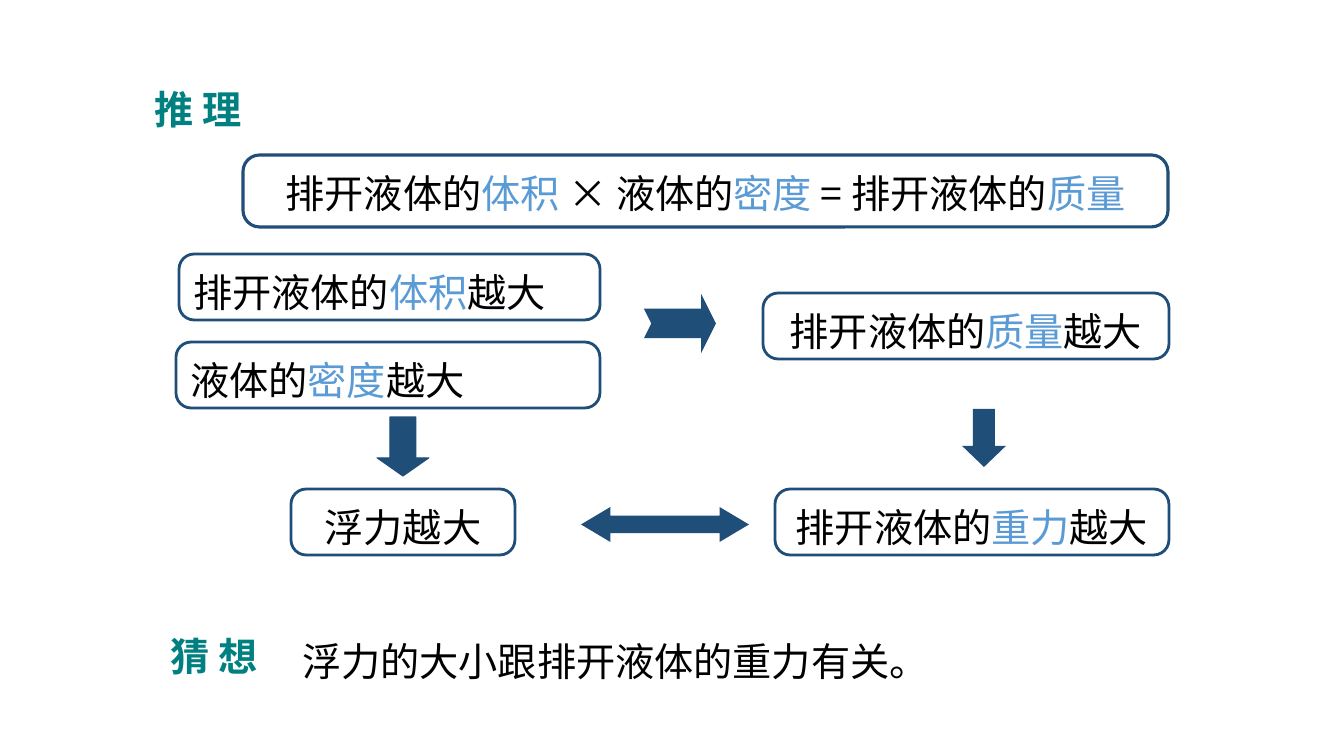
from lxml.etree import SubElement
from pptx import Presentation
from pptx.dml.color import RGBColor
from pptx.enum.shapes import MSO_SHAPE as Shape
from pptx.enum.text import MSO_ANCHOR as Anchor, MSO_AUTO_SIZE as Auto, PP_ALIGN as Align
from pptx.oxml.ns import qn
from pptx.util import Emu, Pt

NAVY = RGBColor(0x1F, 0x4E, 0x79)
SKY = RGBColor(0x5B, 0x9B, 0xD5)
TEAL = RGBColor(0x00, 0x80, 0x80)
BLACK = RGBColor(0, 0, 0)


class Board:
    scale = 914400 / 100.8
    font = "Noto Sans CJK SC"
    size = Pt(28)

    def __init__(self, deck):
        deck.slide_width, deck.slide_height = self.emu(1344, 756)
        self.slide = deck.slides.add_slide(deck.slide_layouts[5])

    def emu(self, *px):
        return [Emu(round(n * self.scale)) for n in px]

    def shape(self, kind, area):
        item = self.slide.shapes.add_shape(kind, *self.emu(*area))
        item.shadow.inherit = False
        item.fill.background()
        item.line.fill.background()
        return item

    def style(self, run, color, bold=False):
        font = run.font
        font.name, font.size, font.bold = self.font, self.size, bold
        font.color.rgb = color
        SubElement(run._r.get_or_add_rPr(), qn("a:ea"), typeface=self.font)

    def frame(self, item, wrap, align=Align.LEFT):
        frame = item.text_frame
        frame.word_wrap = wrap
        frame.auto_size = Auto.NONE
        frame.vertical_anchor = Anchor.TOP
        frame.paragraphs[0].alignment = align
        return frame

    def head(self, item, text):
        frame = self.frame(item, False)
        frame.text = text
        self.style(frame.paragraphs[0].runs[0], TEAL, True)

    def title(self, text, area):
        item = self.slide.shapes.title
        item.left, item.top, item.width, item.height = self.emu(*area)
        self.head(item, text)

    def label(self, text, area):
        self.head(self.shape(Shape.ROUNDED_RECTANGLE, area), text)

    def box(self, text, area, align=Align.CENTER, line=2):
        """Rounded box; the parts of text between asterisks are stressed."""
        item = self.shape(Shape.ROUNDED_RECTANGLE, area)
        item.adjustments[0] = 0.23
        if line:
            item.line.color.rgb = NAVY
            item.line.width = Pt(line)
        frame = self.frame(item, True, align)
        frame.margin_top = 0
        para = frame.paragraphs[0]
        para.line_spacing = 1.2
        for i, part in enumerate(text.split("*")):
            if part:
                run = para.add_run()
                run.text = part
                self.style(run, SKY if i % 2 else BLACK)

    def arrow(self, kind, area, head, line=None):
        item = self.shape(kind, area)
        item.adjustments[0], item.adjustments[1] = 0.5, head
        item.fill.solid()
        item.fill.fore_color.rgb = NAVY
        if line:
            item.line.color.rgb = NAVY
            item.line.width = Pt(line)


def main():
    deck = Presentation()
    board = Board(deck)
    board.title("推 理", (140, 80, 117, 64))
    board.box("排开液体的*体积 *× 液体的*密度 *= 排开液体的*质量*",
              (243, 155, 925, 72), line=2.25)

    board.box("排开液体的*体积*越大", (179, 254, 421, 66), Align.LEFT)
    board.box("液体的*密度*越大", (176, 342, 424, 66), Align.LEFT)
    board.box("排开液体的*质量*越大", (763, 293, 406, 66))
    board.box("浮力越大", (291, 489, 224, 66))
    board.box("排开液体的*重力*越大", (775, 489, 394, 66))

    board.arrow(Shape.NOTCHED_RIGHT_ARROW, (644, 294, 72, 59), 0.25)
    board.arrow(Shape.DOWN_ARROW, (377, 417, 52, 59), 0.35, 0.75)
    board.arrow(Shape.DOWN_ARROW, (962, 409, 44, 58), 0.48)
    board.arrow(Shape.LEFT_RIGHT_ARROW, (581, 507, 168, 35), 0.84)

    board.label("猜 想", (158, 624, 117, 64))
    board.box("浮力的大小跟排开液体的重力有关。", (288, 624, 860, 64), Align.LEFT, None)
    deck.save("out.pptx")


if __name__ == "__main__":
    main()
